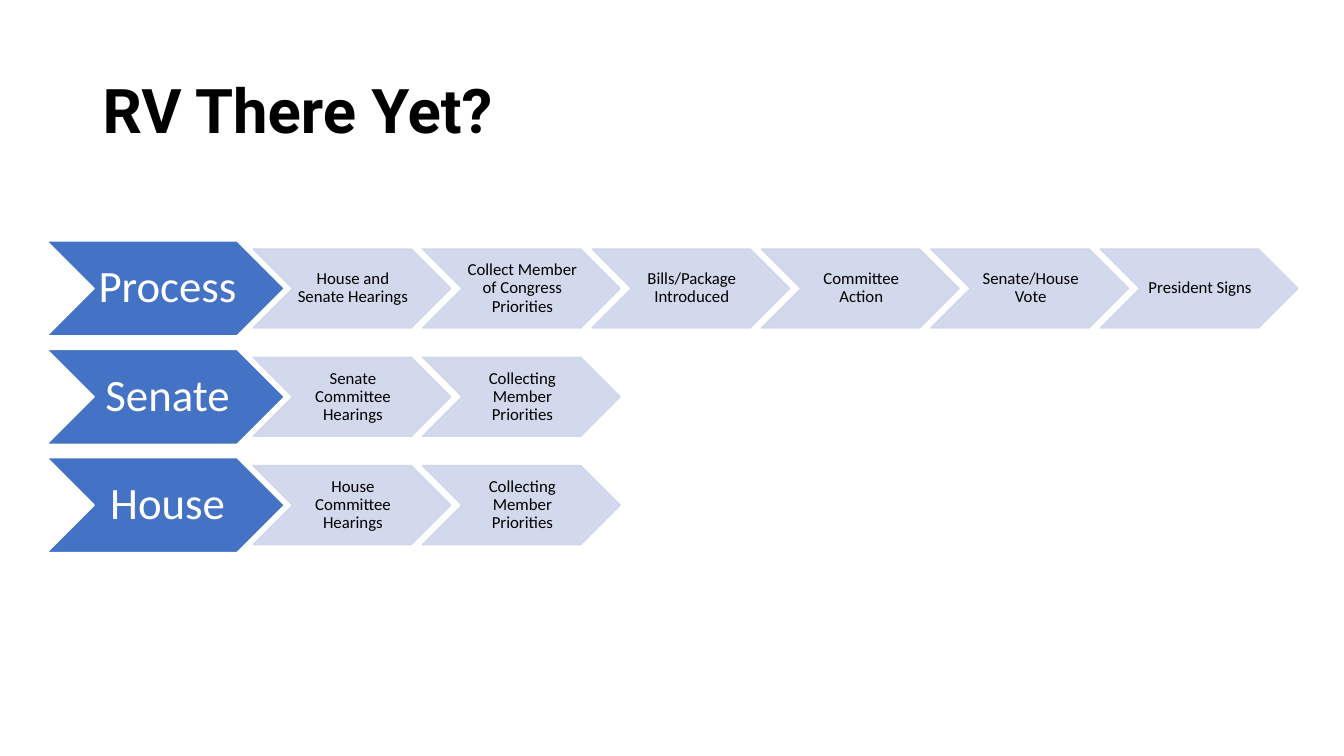
from dataclasses import dataclass

from lxml.etree import SubElement
from pptx import Presentation
from pptx.dml.color import RGBColor as RGB
from pptx.enum.shapes import MSO_SHAPE as SHAPE
from pptx.enum.text import MSO_ANCHOR as ANCHOR, MSO_AUTO_SIZE as FIT, PP_ALIGN as ALIGN
from pptx.oxml.ns import qn
from pptx.util import Cm, Pt


@dataclass(frozen=True)
class Theme:
    black: RGB = RGB(0x00, 0x00, 0x00)
    white: RGB = RGB(0xFF, 0xFF, 0xFF)
    blue: RGB = RGB(0x44, 0x72, 0xC4)
    pale: RGB = RGB(0xCF, 0xD5, 0xEA)
    pale_opacity: int = 90
    title_font: str = "Roboto"
    body_font: str = "Calibri"
    title_size: int = 44
    head_size: int = 32
    step_size: int = 12
    line_spacing: float = 0.9


class Deck:
    def __init__(self, theme):
        self.theme = theme
        self.prs = Presentation()
        self.prs.slide_width, self.prs.slide_height = Cm(33.87), Cm(19.05)
        self.slide = self.prs.slides.add_slide(self.prs.slide_layouts[5])

    def add_text(self, sp, text, font, size, color, align, bold=False, wrap=True):
        tf = sp.text_frame
        tf.auto_size, tf.word_wrap = FIT.NONE, wrap
        tf.vertical_anchor = ANCHOR.MIDDLE
        p = tf.paragraphs[0]
        p.alignment, p.line_spacing = align, self.theme.line_spacing
        r = p.add_run()
        r.text = text
        r.font.name, r.font.size, r.font.bold = font, Pt(size), bold
        r.font.color.rgb = color

    def title(self, text):
        t, sp = self.theme, self.slide.shapes.title
        sp.left, sp.top, sp.width, sp.height = Cm(2.33), Cm(1.01), Cm(29.21), Cm(3.68)
        self.add_text(sp, text, t.title_font, t.title_size, t.black, ALIGN.LEFT, bold=True)

    def chevron(self, left, middle, width, height, fill, line, inset):
        sp = self.slide.shapes.add_shape(
            SHAPE.CHEVRON, Cm(left), Cm(middle - height / 2), Cm(width), Cm(height))
        sp.shadow.inherit = False
        sp.fill.solid()
        sp.fill.fore_color.rgb = fill
        sp.line.color.rgb = line
        sp.line.width = Pt(1)
        tf = sp.text_frame
        tf.margin_left, tf.margin_right = Cm(inset), 0
        tf.margin_top = tf.margin_bottom = Cm(inset / 2)
        return sp

    def head(self, text, left, middle):
        t = self.theme
        sp = self.chevron(left, middle, 5.99, 2.39, t.blue, t.white, 0.1)
        self.add_text(sp, text, t.body_font, t.head_size, t.white, ALIGN.CENTER, wrap=False)

    def step(self, text, left, middle):
        t = self.theme
        sp = self.chevron(left, middle, 4.98, 1.99, t.pale, t.pale, 0.05)
        for color in sp._element.spPr.iter(qn("a:srgbClr")):
            SubElement(color, qn("a:alpha"), val=str(t.pale_opacity * 1000))
        self.add_text(sp, text, t.body_font, t.step_size, t.black, ALIGN.CENTER)


ROWS = {
    "Process": [
        "House and Senate Hearings",
        "Collect Member of Congress Priorities",
        "Bills/Package Introduced",
        "Committee Action",
        "Senate/House Vote",
        "President Signs",
    ],
    "Senate": ["Senate Committee Hearings", "Collecting Member Priorities"],
    "House": ["House Committee Hearings", "Collecting Member Priorities"],
}
HEAD_LEFT, STEP_LEFT, STEP_PITCH = 1.18, 6.38, 4.27
FIRST_MIDDLE, ROW_PITCH = 7.27, 2.73


def main():
    deck = Deck(Theme())

    # Title
    deck.title("RV There Yet?")

    # One row of chevrons per track
    for row, (name, steps) in enumerate(ROWS.items()):
        middle = FIRST_MIDDLE + row * ROW_PITCH
        deck.head(name, HEAD_LEFT, middle)
        for col, text in enumerate(steps):
            deck.step(text, STEP_LEFT + col * STEP_PITCH, middle)

    deck.prs.save("out.pptx")


if __name__ == "__main__":
    main()
